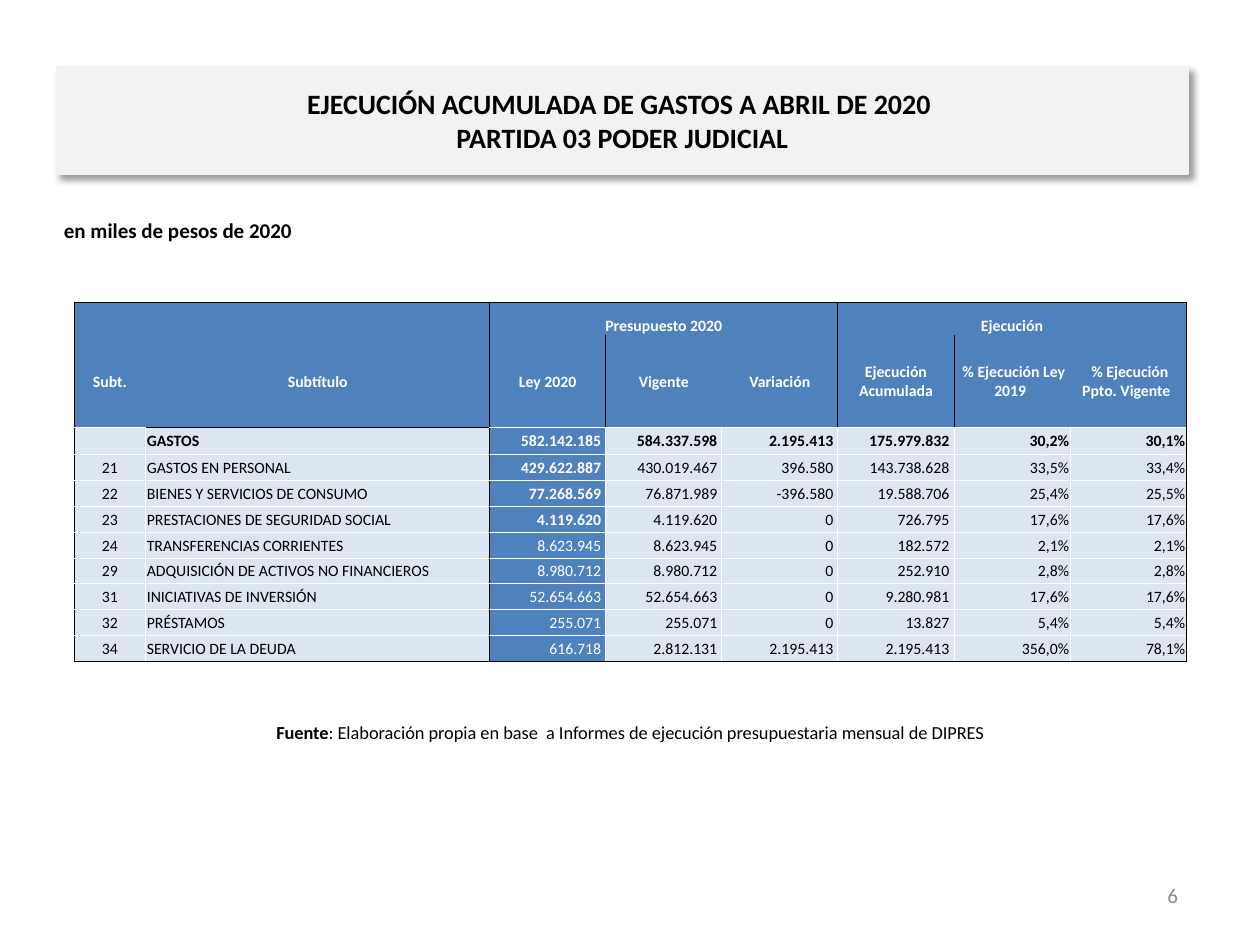
from dataclasses import dataclass
from typing import NamedTuple

from lxml import etree
from pptx import Presentation
from pptx.dml.color import RGBColor as RGB
from pptx.enum.shapes import MSO_SHAPE
from pptx.enum.text import MSO_ANCHOR as Anchor, PP_ALIGN as Align
from pptx.oxml.ns import qn
from pptx.util import Cm, Pt


@dataclass(frozen=True)
class Theme:
    font: str = "Calibri"
    black: str = "000000"
    white: str = "FFFFFF"
    grey: str = "8C8C8C"
    banner: str = "F2F2F2"
    blue: str = "4F81BD"
    pale: str = "DCE6F1"
    title_size: float = 16
    label_size: float = 12
    source_size: float = 10.5
    table_size: float = 9
    border: float = 0.5


class Box(NamedTuple):
    left: float
    top: float
    width: float
    height: float

    def cm(self) -> list:
        return [Cm(v) for v in self]


class Phrase(NamedTuple):
    text: str
    bold: bool = False


class Note(NamedTuple):
    box: Box
    phrases: list[Phrase]
    size: float
    color: str
    align: Align
    anchor: Anchor


class Spending(NamedTuple):
    code: str
    name: str
    law: str
    current: str
    change: str
    spent: str
    law_share: str
    current_share: str
    bold: bool = False
    bold_law: bool = False


T = Theme()
NO_STYLE = "{2D5ABB26-0587-4C30-8999-92F81FD0307C}"

NOTES = [
    Note(Box(1.04, 14.25, 23.34, 1.02),
         [Phrase("Fuente", True),
          Phrase(": Elaboración propia en base  a Informes de ejecución presupuestaria mensual de DIPRES")],
         T.source_size, T.black, Align.CENTER, Anchor.MIDDLE),
    Note(Box(18.08, 17.53, 5.92, 1.02), [Phrase("6")],
         T.label_size, T.grey, Align.RIGHT, Anchor.MIDDLE),
    Note(Box(1.04, 4.27, 22.86, 1.27), [Phrase("en miles de pesos de 2020", True)],
         T.label_size, T.black, Align.LEFT, Anchor.TOP),
]

GROUPS = {2: "Presupuesto 2020", 5: "Ejecución"}
HEADINGS = ["Subt.", "Subtítulo", "Ley 2020", "Vigente", "Variación", "Ejecución Acumulada",
            " % Ejecución Ley 2019 ", " % Ejecución Ppto. Vigente "]
SPENDING = [
    Spending("", "GASTOS", "582.142.185", "584.337.598", "2.195.413", "175.979.832",
             "30,2%", "30,1%", bold=True),
    Spending("21", "GASTOS EN PERSONAL", "429.622.887", "430.019.467", "396.580",
             "143.738.628", "33,5%", "33,4%", bold_law=True),
    Spending("22", "BIENES Y SERVICIOS DE CONSUMO", "77.268.569", "76.871.989", "-396.580",
             "19.588.706", "25,4%", "25,5%", bold_law=True),
    Spending("23", "PRESTACIONES DE SEGURIDAD SOCIAL", "4.119.620", "4.119.620", "0",
             "726.795", "17,6%", "17,6%", bold_law=True),
    Spending("24", "TRANSFERENCIAS CORRIENTES", "8.623.945", "8.623.945", "0",
             "182.572", "2,1%", "2,1%"),
    Spending("29", "ADQUISICIÓN DE ACTIVOS NO FINANCIEROS", "8.980.712", "8.980.712", "0",
             "252.910", "2,8%", "2,8%"),
    Spending("31", "INICIATIVAS DE INVERSIÓN", "52.654.663", "52.654.663", "0",
             "9.280.981", "17,6%", "17,6%"),
    Spending("32", "PRÉSTAMOS", "255.071", "255.071", "0", "13.827", "5,4%", "5,4%"),
    Spending("34", "SERVICIO DE LA DEUDA", "616.718", "2.812.131", "2.195.413",
             "2.195.413", "356,0%", "78,1%"),
]
COL_WIDTHS = [1.45, 6.93] + [2.34] * 6
ROW_HEIGHTS = [0.66, 1.85, 0.56] + [0.52] * 8
HEADER_ROWS = 2
LAST_ROW = len(ROW_HEIGHTS) - 1


def style_run(r, size: float, color: str, bold: bool) -> None:
    r.font.name, r.font.size, r.font.bold = T.font, Pt(size), bold
    r.font.color.rgb = RGB.from_string(color)


def add_banner(s, box: Box, text: str) -> None:
    sp = s.shapes.add_shape(MSO_SHAPE.RECTANGLE, *box.cm())
    sp.fill.solid()
    sp.fill.fore_color.rgb = sp.line.color.rgb = RGB.from_string(T.banner)
    sp.line.width = Pt(0.75)
    # Soft shadow towards the lower right
    sp.shadow.inherit = False
    effects = sp._element.spPr.find(qn("a:effectLst"))
    shadow = etree.SubElement(effects, qn("a:outerShdw"), blurRad=str(Pt(4)), dist=str(Pt(3)),
                              dir="2700000", algn="tl", rotWithShape="0")
    color = etree.SubElement(shadow, qn("a:srgbClr"), val=T.black)
    etree.SubElement(color, qn("a:alpha"), val="40000")
    tf = sp.text_frame
    tf.text = text
    tf.word_wrap, tf.vertical_anchor = True, Anchor.MIDDLE
    p = tf.paragraphs[0]
    p.alignment = Align.CENTER
    for r in p.runs:
        style_run(r, T.title_size, T.black, True)


def add_note(s, note: Note) -> None:
    tf = s.shapes.add_textbox(*note.box.cm()).text_frame
    tf.word_wrap, tf.vertical_anchor = True, note.anchor
    p = tf.paragraphs[0]
    p.alignment = note.align
    for phrase in note.phrases:
        r = p.add_run()
        r.text = phrase.text
        style_run(r, note.size, note.color, phrase.bold)


def cell_borders(row: int, col: int) -> dict[str, str]:
    """Colour of each drawn side: black round the blocks, white inside the body."""
    header = row < HEADER_ROWS
    sides = {} if header else dict.fromkeys(("lnL", "lnR", "lnT", "lnB"), T.white)
    if row == HEADER_ROWS - 1:
        sides["lnB"] = T.white
    black = {
        "lnL": col in ((0, 2, 5) if header else (0, 2)),
        "lnR": col in ((1, 4, 7) if header else (1, 7)) or (row == 0 and col in GROUPS),
        "lnT": row == 0 or (row, col) == (HEADER_ROWS, 1),
        "lnB": row == LAST_ROW or (row, col) == (HEADER_ROWS - 1, 1),
    }
    sides.update({side: T.black for side, drawn in black.items() if drawn})
    return sides


def fill_cell(cell, row: int, col: int, text: str, align: Align, bold: bool) -> None:
    dark = row < HEADER_ROWS or col == 2
    cell.margin_left = cell.margin_right = cell.margin_top = Cm(0.02)
    cell.margin_bottom = 0
    cell.vertical_anchor = Anchor.BOTTOM if row == 0 else Anchor.MIDDLE
    tcPr = cell._tc.get_or_add_tcPr()
    sides = cell_borders(row, col)
    for side in ("lnL", "lnR", "lnT", "lnB"):
        if side in sides:
            ln = etree.SubElement(tcPr, qn(f"a:{side}"), w=str(Pt(T.border)))
            solid = etree.SubElement(ln, qn("a:solidFill"))
            etree.SubElement(solid, qn("a:srgbClr"), val=sides[side])
    cell.fill.solid()
    cell.fill.fore_color.rgb = RGB.from_string(T.blue if dark else T.pale)
    p = cell.text_frame.paragraphs[0]
    p.alignment = align
    if text:
        p.text = text
        style_run(p.runs[0], T.table_size, T.white if dark else T.black, bold)
    else:  # keeps empty cells from stretching the row
        end = etree.SubElement(p._p, qn("a:endParaRPr"))
        end.set("sz", str(int(T.table_size * 100)))


def add_spending_table(s, left: float, top: float) -> None:
    box = Box(left, top, sum(COL_WIDTHS), sum(ROW_HEIGHTS))
    frame = s.shapes.add_table(len(ROW_HEIGHTS), len(COL_WIDTHS), *box.cm())
    table = frame.table
    table.first_row = table.horz_banding = False
    table._tbl.tblPr.find(qn("a:tableStyleId")).text = NO_STYLE
    for column, width in zip(table.columns, COL_WIDTHS):
        column.width = Cm(width)
    for row, height in zip(table.rows, ROW_HEIGHTS):
        row.height = Cm(height)

    # Two header rows
    for col, heading in enumerate(HEADINGS):
        fill_cell(table.cell(0, col), 0, col, GROUPS.get(col, ""), Align.CENTER, True)
        fill_cell(table.cell(1, col), 1, col, heading, Align.CENTER, True)
    for col in GROUPS:
        table.cell(0, col).merge(table.cell(0, col + 2))

    # Amounts end in a space, percentages do not
    aligns = [Align.CENTER, Align.JUSTIFY] + [Align.RIGHT] * 6
    for row, item in enumerate(SPENDING, HEADER_ROWS):
        for col, align in enumerate(aligns):
            text = item[col] + (" " if 2 <= col <= 5 else "")
            bold = item.bold or (item.bold_law and col == 2)
            fill_cell(table.cell(row, col), row, col, text, align, bold)


def main() -> None:
    prs = Presentation()
    prs.slide_width, prs.slide_height = Cm(25.4), Cm(19.05)
    s = prs.slides.add_slide(prs.slide_layouts[6])
    for note in NOTES:
        add_note(s, note)
    add_banner(s, Box(1.14, 1.35, 22.81, 2.16),
               "EJECUCIÓN ACUMULADA DE GASTOS A ABRIL DE 2020 \vPARTIDA 03 PODER JUDICIAL")
    add_spending_table(s, 1.49, 6.1)
    prs.save("out.pptx")


if __name__ == "__main__":
    main()
